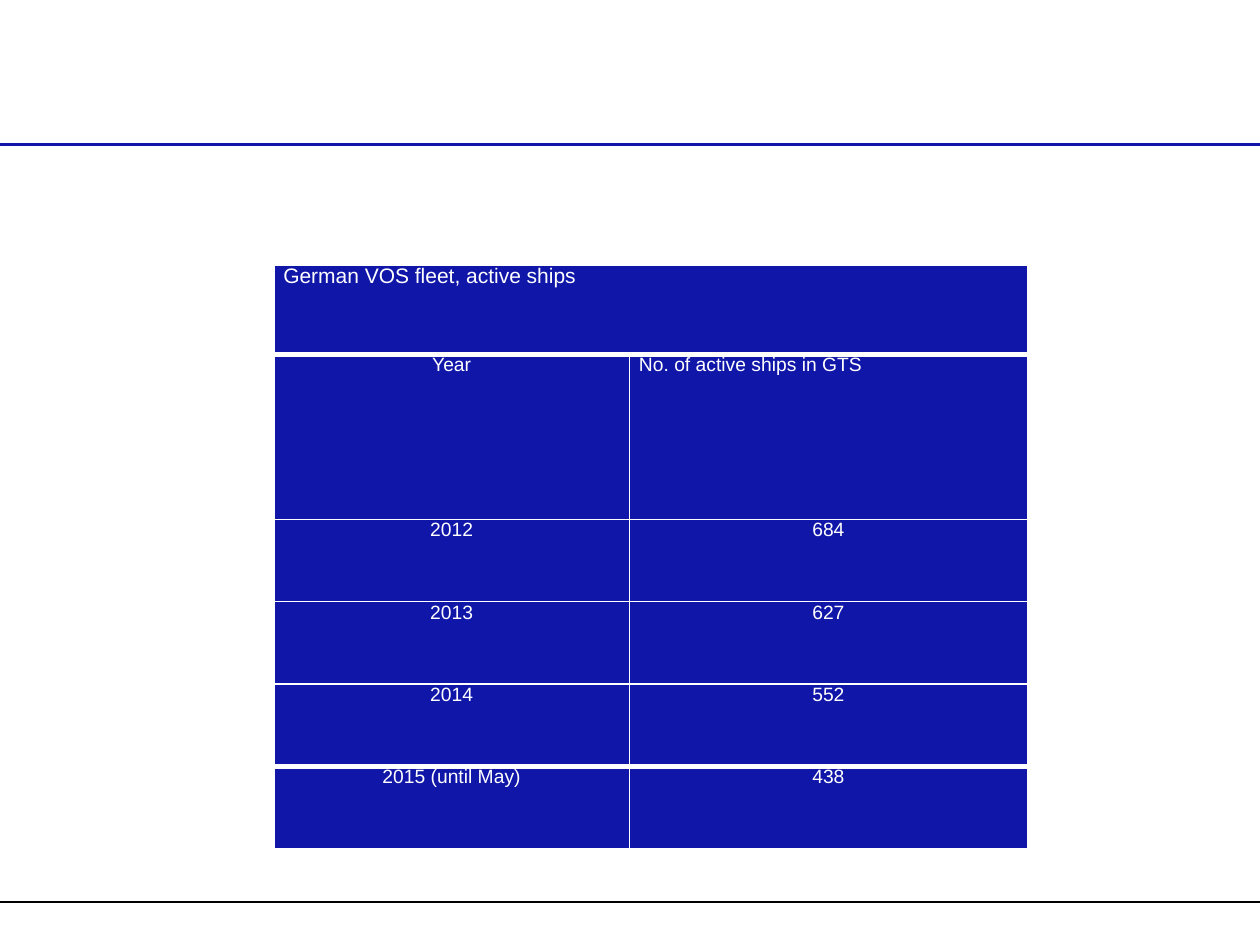
from dataclasses import dataclass

from lxml.etree import SubElement
from pptx import Presentation
from pptx.dml.color import RGBColor
from pptx.enum.shapes import MSO_CONNECTOR
from pptx.enum.text import MSO_ANCHOR, PP_ALIGN as Align
from pptx.oxml.ns import qn
from pptx.util import Cm, Pt

BLUE = RGBColor(0x10, 0x17, 0xA8)
WHITE = RGBColor(0xFF, 0xFF, 0xFF)
BLACK = RGBColor(0x00, 0x00, 0x00)
FONT = "Arial"
SLIDE_WIDTH, SLIDE_HEIGHT = Cm(25.4), Cm(19.05)


@dataclass
class Rule:
    top: float
    color: RGBColor
    width: float


@dataclass
class CellText:
    text: str
    align: Align = Align.CENTER
    size: float = 11


@dataclass
class Row:
    height: float
    cells: list[CellText]
    top_border: float = 1
    bottom_border: float = 1


RULES = [Rule(18.19, BLACK, 1.25), Rule(2.92, BLUE, 1.75)]

COLUMN_WIDTHS = [7.17, 8.02]
YEAR_HEIGHT = 1.66
ACTIVE_SHIPS = [("2012", "684"), ("2013", "627"), ("2014", "552"),
                ("2015 (until May)", "438")]
ROWS = [
    Row(1.8, [CellText("German VOS fleet, active ships", Align.LEFT, 12)],
        bottom_border=3),
    Row(3.33, [CellText("Year"),
               CellText("No. of active ships in GTS", Align.LEFT)]),
    *(Row(YEAR_HEIGHT, [CellText(year), CellText(ships)])
      for year, ships in ACTIVE_SHIPS),
]
ROWS[-1].top_border = 3


def add_rule(slide, rule: Rule) -> None:
    connector = slide.shapes.add_connector(
        MSO_CONNECTOR.STRAIGHT, 0, Cm(rule.top), SLIDE_WIDTH, Cm(rule.top))
    connector.line.color.rgb = rule.color
    connector.line.width = Pt(rule.width)
    SubElement(connector._element.spPr, qn("a:effectLst"))


def add_border(cell, side: str, width: float) -> None:
    properties = cell._tc.get_or_add_tcPr()
    line = SubElement(properties, qn(f"a:ln{side}"), w=str(Pt(width)))
    fill = SubElement(line, qn("a:solidFill"))
    SubElement(fill, qn("a:srgbClr"), val=str(WHITE))


def style_cell(cell, row: Row) -> None:
    # Borders come before the fill in the cell properties
    for side, width in (("L", 1), ("R", 1), ("T", row.top_border),
                        ("B", row.bottom_border)):
        add_border(cell, side, width)
    cell.fill.solid()
    cell.fill.fore_color.rgb = BLUE
    cell.margin_left = cell.margin_right = Cm(0.19)
    cell.margin_top = cell.margin_bottom = 0
    cell.vertical_anchor = MSO_ANCHOR.TOP


def write_cell(cell, content: CellText) -> None:
    paragraph = cell.text_frame.paragraphs[0]
    paragraph.alignment = content.align
    run = paragraph.add_run()
    run.text = content.text
    run.font.name = FONT
    run.font.size = Pt(content.size)
    run.font.color.rgb = WHITE


def add_fleet_table(slide, left: float, top: float) -> None:
    table = slide.shapes.add_table(
        len(ROWS), len(COLUMN_WIDTHS), Cm(left), Cm(top),
        Cm(sum(COLUMN_WIDTHS)), Cm(sum(row.height for row in ROWS))).table
    table.first_row = table.horz_banding = False
    for column, width in zip(table.columns, COLUMN_WIDTHS):
        column.width = Cm(width)
    table.cell(0, 0).merge(table.cell(0, len(COLUMN_WIDTHS) - 1))
    for table_row, row in zip(table.rows, ROWS):
        table_row.height = Cm(row.height)
        for cell in table_row.cells:
            style_cell(cell, row)
        for cell, content in zip(table_row.cells, row.cells):
            write_cell(cell, content)


def main() -> None:
    presentation = Presentation()
    presentation.slide_width = SLIDE_WIDTH
    presentation.slide_height = SLIDE_HEIGHT
    slide = presentation.slides.add_slide(presentation.slide_layouts[6])

    # Footer and header rules
    for rule in RULES:
        add_rule(slide, rule)

    # Ships per year
    add_fleet_table(slide, left=5.52, top=5.34)

    presentation.save("out.pptx")


if __name__ == "__main__":
    main()
